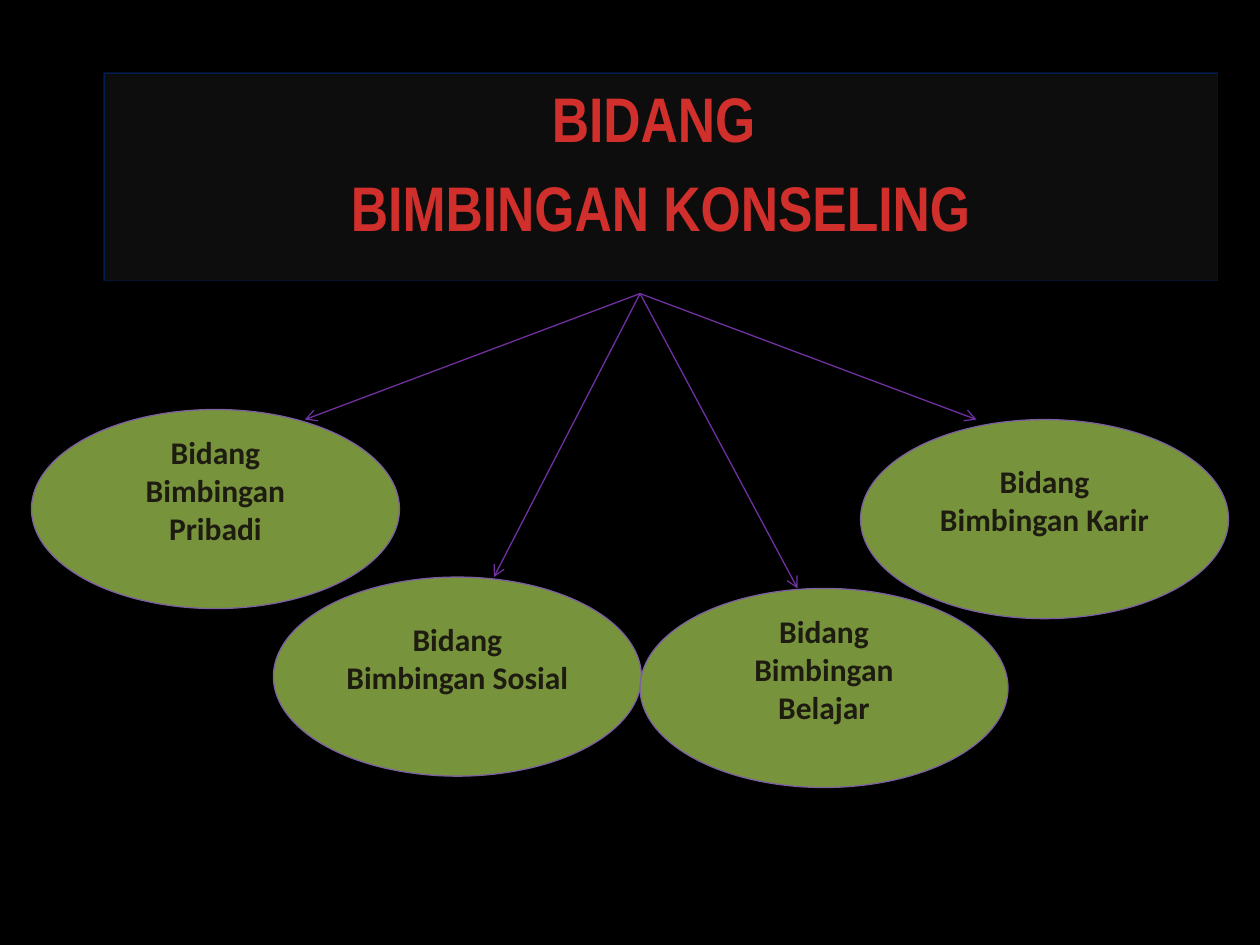
from lxml import etree
from pptx import Presentation
from pptx.dml.color import RGBColor as RGB
from pptx.enum.shapes import MSO_CONNECTOR as Link, MSO_SHAPE as Form
from pptx.enum.text import MSO_ANCHOR as Anchor, PP_ALIGN as Align
from pptx.oxml.ns import qn
from pptx.util import Inches, Pt

COLORS = {
    "back": "000000", "panel": "0D0D0D", "frame": "002060", "title": "D02F2C",
    "arrow": "7030A0", "oval": "77933C", "edge": "7D60A0", "text": "1E1C11",
}
HUB = (5.08, 2.33)
OVAL = (2.92, 1.58)
# label, left and top of the oval, tip of its arrow
FIELDS = [
    ("Sosial", (2.17, 4.58), (3.92, 4.58)),
    ("Pribadi", (0.25, 3.25), (2.42, 3.33)),
    ("Belajar", (5.08, 4.67), (6.33, 4.67)),
    ("Karir", (6.83, 3.33), (7.75, 3.33)),
]


def color(name):
    return RGB.from_string(COLORS[name])


class Page:
    def __init__(self, deck):
        self.slide = deck.slides.add_slide(deck.slide_layouts[5])
        fill = self.slide.background.fill
        fill.solid()
        fill.fore_color.rgb = color("back")

    def paint(self, shape, fill, line):
        shape.fill.solid()
        shape.fill.fore_color.rgb = color(fill)
        shape.line.color.rgb = color(line)
        shape.line.width = Pt(0.75)

    def format(self, para, font, size, tint):
        para.alignment = Align.CENTER
        para.font.name = font
        para.font.size = Pt(size)
        para.font.bold = True
        para.font.color.rgb = color(tint)

    def title(self, text, box):
        shape = self.slide.shapes.title
        shape.left, shape.top, shape.width, shape.height = map(Inches, box)
        self.paint(shape, "panel", "frame")
        effects = etree.SubElement(shape.element.spPr, qn("a:effectLst"))
        etree.SubElement(effects, qn("a:softEdge"), rad=str(Pt(1)))
        frame = shape.text_frame
        frame.text = text
        frame.vertical_anchor = Anchor.TOP
        for para in frame.paragraphs:
            self.format(para, "Arial Narrow", 36, "title")
            para.space_before = Pt(8)

    def arrow(self, start, end):
        points = map(Inches, start + end)
        link = self.slide.shapes.add_connector(Link.STRAIGHT, *points)
        link.line.color.rgb = color("arrow")
        link.line.width = Pt(0.75)
        props = link.element.spPr
        etree.SubElement(props.find(qn("a:ln")), qn("a:tailEnd"), type="arrow")
        etree.SubElement(props, qn("a:effectLst"))

    def oval(self, text, spot):
        shape = self.slide.shapes.add_shape(Form.OVAL, *map(Inches, spot + OVAL))
        shape.shadow.inherit = False
        self.paint(shape, "oval", "edge")
        frame = shape.text_frame
        frame.word_wrap = True
        frame.vertical_anchor = Anchor.MIDDLE
        frame.margin_bottom = Inches(0.35)
        frame.text = text
        self.format(frame.paragraphs[0], "Calibri", 18, "text")


def main():
    deck = Presentation()
    deck.slide_width, deck.slide_height = Inches(10), Inches(7.5)
    page = Page(deck)
    page.title("BIDANG \nBIMBINGAN KONSELING", (0.83, 0.58, 8.83, 1.64))
    for _, _, tip in FIELDS:
        page.arrow(HUB, tip)
    for name, spot, _ in FIELDS:
        page.oval(f"Bidang Bimbingan {name}", spot)
    deck.save("out.pptx")


if __name__ == "__main__":
    main()
